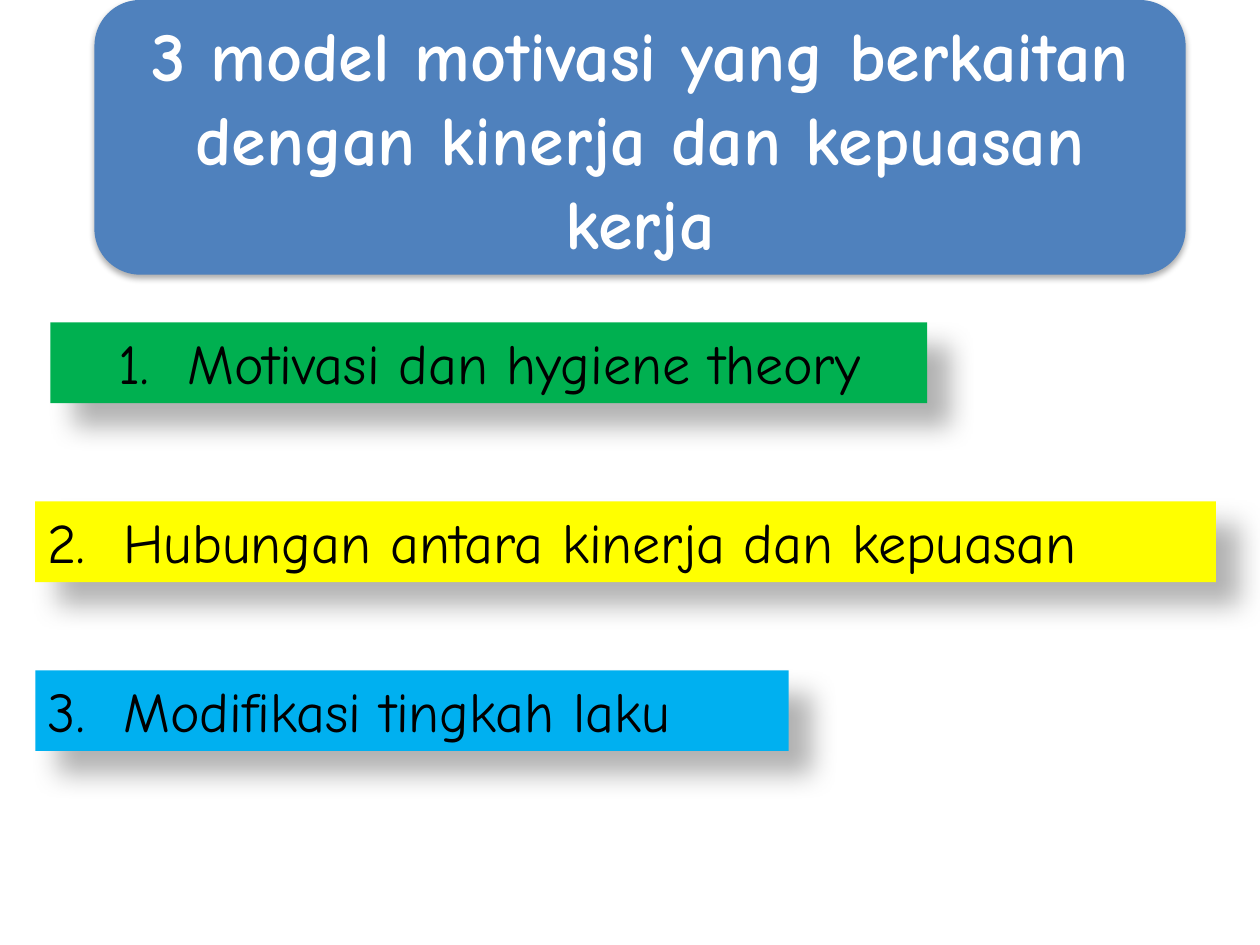
from dataclasses import dataclass

from lxml import etree
from pptx import Presentation
from pptx.dml.color import RGBColor
from pptx.enum.shapes import MSO_SHAPE
from pptx.enum.text import MSO_ANCHOR, MSO_AUTO_SIZE, PP_ALIGN
from pptx.oxml.ns import qn
from pptx.util import Inches, Pt

RECT, ROUNDED = MSO_SHAPE.RECTANGLE, MSO_SHAPE.ROUNDED_RECTANGLE
LEFT, CENTER = PP_ALIGN.LEFT, PP_ALIGN.CENTER
TOP, MIDDLE = MSO_ANCHOR.TOP, MSO_ANCHOR.MIDDLE
FIT_SHAPE = MSO_AUTO_SIZE.SHAPE_TO_FIT_TEXT

FONT = "Comic Neue"
BLACK = RGBColor(0x00, 0x00, 0x00)
WHITE = RGBColor(0xFF, 0xFF, 0xFF)
BLUE = RGBColor(0x4F, 0x81, 0xBD)
GREEN = RGBColor(0x00, 0xB0, 0x50)
YELLOW = RGBColor(0xFF, 0xFF, 0x00)
SKY = RGBColor(0x00, 0xB0, 0xF0)


@dataclass(frozen=True)
class Shadow:
    opacity: int
    blur: float
    distance: float
    angle: int


@dataclass(frozen=True)
class Model:
    text: str
    left: float
    top: float
    width: float
    fill: RGBColor
    inset: float = 0.1
    indent: float = 0.6


TITLE = "3 model motivasi yang berkaitan dengan kinerja dan kepuasan kerja"
TITLE_SHADOW = Shadow(32, 3.5, 2.2, 90)
BAR_SHADOW = Shadow(30, 15, 18, 45)
BAR_HEIGHT = 0.64
MODELS = (
    Model("Motivasi dan hygiene theory", 0.4, 2.56, 6.96, GREEN, 0.54, 0.55),
    Model("Hubungan antara kinerja dan kepuasan", 0.28, 3.98, 9.37, YELLOW),
    Model("Modifikasi tingkah laku", 0.28, 5.32, 5.98, SKY),
)


def add_box(s, kind, left: float, top: float, width: float, height: float,
            fill: RGBColor, shadow: Shadow):
    sp = s.shapes.add_shape(kind, Inches(left), Inches(top), Inches(width), Inches(height))
    sp.fill.solid()
    sp.fill.fore_color.rgb = fill
    sp.line.fill.background()
    sp.shadow.inherit = False
    effects = sp._element.spPr.find(qn("a:effectLst"))
    outer = etree.SubElement(
        effects, qn("a:outerShdw"), blurRad=str(Pt(shadow.blur)),
        dist=str(Pt(shadow.distance)), dir=str(shadow.angle * 60000),
        algn="tl", rotWithShape="0")
    color = etree.SubElement(outer, qn("a:srgbClr"), val=str(BLACK))
    etree.SubElement(color, qn("a:alpha"), val=str(shadow.opacity * 1000))
    return sp


def write(sp, text: str, *, size: int, color: RGBColor, bold: bool = False,
          align=LEFT, anchor=TOP):
    tf = sp.text_frame
    tf.word_wrap = True
    tf.vertical_anchor = anchor
    p = tf.paragraphs[0]
    p.alignment = align
    r = p.add_run()
    r.text = text
    r.font.name = FONT
    r.font.size = Pt(size)
    r.font.bold = bold
    r.font.color.rgb = color
    return p


def add_model(s, number: int, model: Model) -> None:
    sp = add_box(s, RECT, model.left, model.top, model.width, BAR_HEIGHT,
                 model.fill, BAR_SHADOW)
    p = write(sp, model.text, size=32, color=BLACK)
    sp.text_frame.auto_size = FIT_SHAPE
    sp.text_frame.margin_left = Inches(model.inset)
    pPr = p._p.get_or_add_pPr()
    pPr.set("marL", str(Inches(model.indent)))
    pPr.set("indent", str(-Inches(model.indent)))
    etree.SubElement(pPr, qn("a:buFont"), typeface=FONT)
    etree.SubElement(pPr, qn("a:buAutoNum"), type="arabicPeriod", startAt=str(number))


def main() -> None:
    """Build the slide on three models of motivation."""
    prs = Presentation()
    prs.slide_width, prs.slide_height = Inches(10), Inches(7.5)
    s = prs.slides.add_slide(prs.slide_layouts[6])
    title = add_box(s, ROUNDED, 0.75, 0, 8.66, 2.18, BLUE, TITLE_SHADOW)
    write(title, TITLE, size=40, color=WHITE, bold=True, align=CENTER, anchor=MIDDLE)
    for number, model in enumerate(MODELS, start=1):
        add_model(s, number, model)
    prs.save("out.pptx")


if __name__ == "__main__":
    main()
